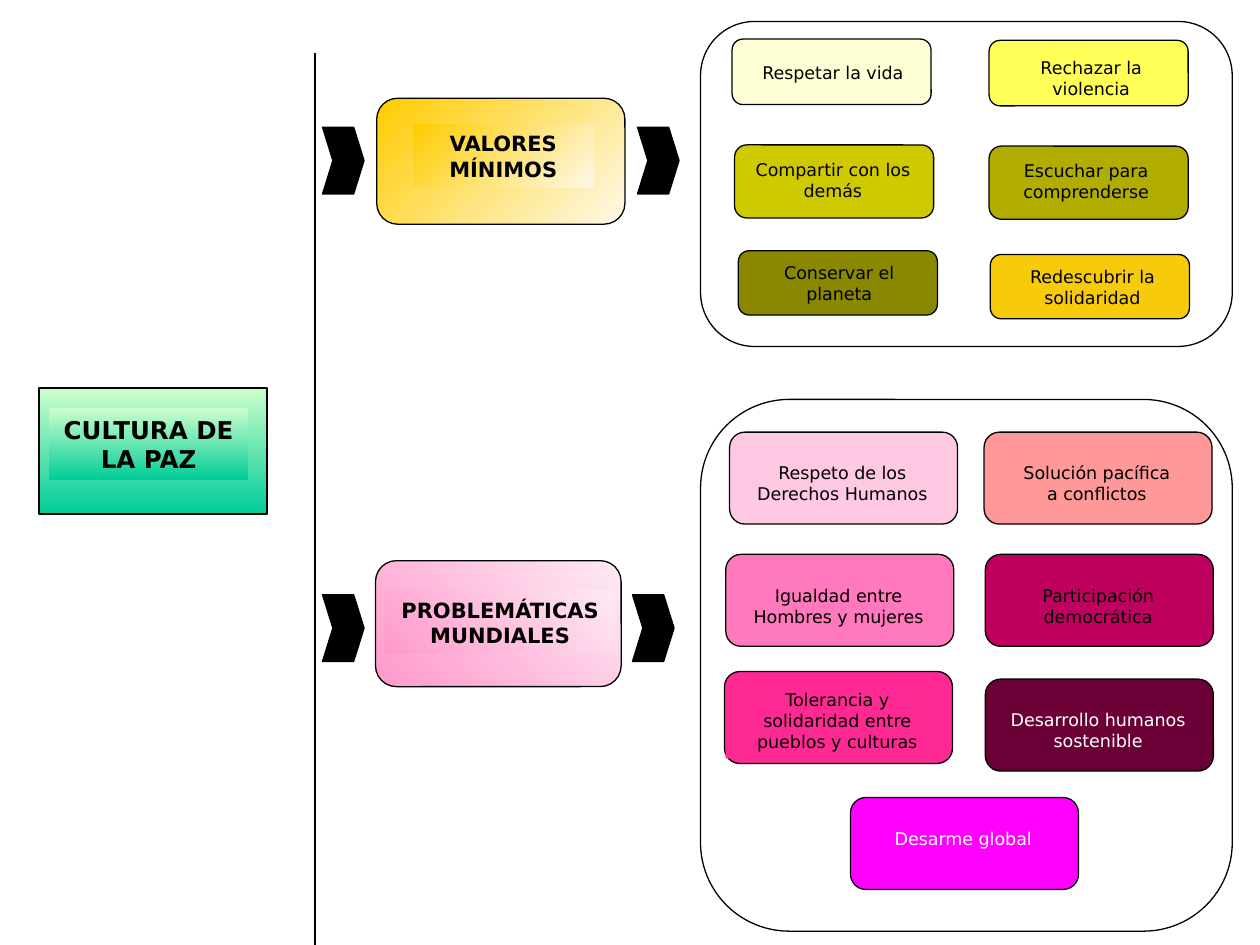
from dataclasses import dataclass
from typing import NamedTuple, Optional

from lxml.etree import SubElement
from pptx import Presentation
from pptx.dml.color import RGBColor
from pptx.enum.shapes import MSO_CONNECTOR, MSO_SHAPE
from pptx.enum.text import MSO_ANCHOR, MSO_AUTO_SIZE, PP_ALIGN
from pptx.oxml.ns import qn
from pptx.util import Inches, Pt


@dataclass(frozen=True)
class Theme:
    font: str = "DejaVu Sans"
    ink: str = "000000"
    light: str = "FFFFFF"
    root_size: float = 14
    branch_size: float = 12
    leaf_size: float = 10
    line_width: float = 0.75
    root: tuple = ("CCFFCC", "00CC99")
    values: tuple = ("FEF9E9", "FFCC00")
    problems: tuple = ("FEEAF4", "FF99CC")


THEME = Theme()


class Box(NamedTuple):
    x: float
    y: float
    w: float
    h: float


class Paint(NamedTuple):
    """One colour, or two colours with a counterclockwise angle."""
    start: str
    end: Optional[str] = None
    angle: float = 0


class Node(NamedTuple):
    """A frame with a text label laid over it."""
    text: str
    frame: Box
    label: Box
    paint: Paint
    size: float = THEME.leaf_size
    color: str = THEME.ink
    bold: bool = False
    shape: MSO_SHAPE = MSO_SHAPE.ROUNDED_RECTANGLE


def rgb(value: str) -> RGBColor:
    return RGBColor.from_string(value)


def apply_paint(sp, paint: Optional[Paint]) -> None:
    if paint is None:
        sp.fill.background()
    elif paint.end is None:
        sp.fill.solid()
        sp.fill.fore_color.rgb = rgb(paint.start)
    else:
        sp.fill.gradient()
        sp.fill.gradient_angle = paint.angle
        for stop, color in zip(sp.fill.gradient_stops, (paint.start, paint.end)):
            stop.color.rgb = rgb(color)


def draw_shape(s, kind: MSO_SHAPE, box: Box, paint: Optional[Paint],
               outlined: bool = True):
    sp = s.shapes.add_shape(kind, *map(Inches, box))
    sp.shadow.inherit = False
    apply_paint(sp, paint)
    if outlined:
        sp.line.color.rgb = rgb(THEME.ink)
        sp.line.width = Pt(THEME.line_width)
    else:
        sp.line.fill.background()
    return sp


def write_label(sp, node: Node) -> None:
    tf = sp.text_frame
    frame_format = {
        "word_wrap": True, "auto_size": MSO_AUTO_SIZE.NONE,
        "vertical_anchor": MSO_ANCHOR.TOP,
        "margin_left": Inches(0.1), "margin_right": Inches(0.1),
        "margin_top": Inches(0.05), "margin_bottom": Inches(0.05),
    }
    for name, value in frame_format.items():
        setattr(tf, name, value)
    font_format = {"name": THEME.font, "size": Pt(node.size), "bold": node.bold}
    for i, line in enumerate(node.text.split("\n")):
        p = tf.paragraphs[0] if i == 0 else tf.add_paragraph()
        p.alignment = PP_ALIGN.CENTER
        r = p.add_run()
        r.text = line
        for name, value in font_format.items():
            setattr(r.font, name, value)
        r.font.color.rgb = rgb(node.color)


def draw_node(s, node: Node) -> None:
    draw_shape(s, node.shape, node.frame, node.paint)
    sp = draw_shape(s, MSO_SHAPE.RECTANGLE, node.label, node.paint, outlined=False)
    write_label(sp, node)


def draw_title(s, node: Node) -> None:
    """Place the slide title over its own frame."""
    draw_shape(s, node.shape, node.frame, node.paint)
    sp = s.shapes.title
    sp.left, sp.top, sp.width, sp.height = map(Inches, node.label)
    apply_paint(sp, node.paint)
    write_label(sp, node)
    s.shapes._spTree.append(sp._element)  # bring in front of the frame


def draw_divider(s, x: float, top: float, bottom: float) -> None:
    line = s.shapes.add_connector(
        MSO_CONNECTOR.STRAIGHT, Inches(x), Inches(top), Inches(x), Inches(bottom))
    line.line.color.rgb = rgb(THEME.ink)
    line.line.width = Pt(THEME.line_width)
    SubElement(line._element.spPr, qn("a:effectLst"))


def draw_chevron(s, x: float, y: float) -> None:
    sp = draw_shape(s, MSO_SHAPE.CHEVRON, Box(x, y, 0.33, 0.53), Paint(THEME.ink))
    sp.adjustments[0] = 0.25


def value_node(text: str, x: float, y: float, h: float, color: str,
               label: Box) -> Node:
    return Node(text, Box(x, y, 1.58, h), label, Paint(color))


def problem_node(text: str, x: float, y: float, fill: str,
                 color: str = THEME.ink, drop: float = 0.19,
                 label_h: float = 0.43) -> Node:
    return Node(text, Box(x, y, 1.81, 0.73), Box(x + 0.01, y + drop, 1.77, label_h),
                Paint(fill), color=color)


ROOT = Node("CULTURA DE LA PAZ", Box(0.31, 3.08, 1.81, 1), Box(0.39, 3.24, 1.58, 0.57),
            Paint(*THEME.root, 270), THEME.root_size, bold=True,
            shape=MSO_SHAPE.RECTANGLE)

BRANCHES = [
    Node("VALORES MÍNIMOS", Box(2.99, 0.78, 1.97, 1), Box(3.28, 0.99, 1.43, 0.5),
         Paint(*THEME.values, 135), THEME.branch_size, bold=True),
    Node("PROBLEMÁTICAS MUNDIALES", Box(2.98, 4.45, 1.95, 1),
         Box(3.05, 4.69, 1.84, 0.5),
         Paint(*THEME.problems, 225), THEME.branch_size, bold=True),
]

CHEVRONS = [(2.56, 1.01), (5.06, 1.01), (2.56, 4.72), (5.02, 4.72)]
PANELS = [Box(5.56, 0.17, 4.22, 2.58), Box(5.56, 3.17, 4.22, 4.22)]

VALUES = [
    value_node("Respetar la vida", 5.81, 0.31, 0.52, "FFFFD5",
               Box(5.92, 0.44, 1.38, 0.27)),
    value_node("Compartir con los\ndemás", 5.83, 1.15, 0.58, "CFCA00",
               Box(5.89, 1.21, 1.44, 0.43)),
    value_node("Rechazar la violencia", 7.85, 0.32, 0.52, "FFFF57",
               Box(7.97, 0.4, 1.38, 0.43)),
    value_node("Escuchar para comprenderse", 7.85, 1.16, 0.58, "B0AC00",
               Box(7.9, 1.22, 1.44, 0.43)),
    value_node("Redescubrir la solidaridad", 7.86, 2.02, 0.51, "F8CB0A",
               Box(8.03, 2.06, 1.28, 0.43)),
    value_node("Conservar el planeta", 5.86, 1.99, 0.51, "8A8700",
               Box(6.02, 2.03, 1.28, 0.43)),
]

PROBLEMS = [
    problem_node("Tolerancia y solidaridad entre pueblos y culturas", 5.75, 5.33,
                 "FF2994", drop=0.09, label_h=0.6),
    problem_node("Respeto de los\nDerechos Humanos", 5.79, 3.43, "FFC9E4"),
    problem_node("Solución pacífica\na conflictos", 7.81, 3.43, "FF9999"),
    problem_node("Igualdad entre\nHombres y mujeres", 5.76, 4.4, "FF79BC"),
    problem_node("Participación\ndemocrática", 7.82, 4.4, "BE005F"),
    problem_node("Desarrollo humanos\nsostenible", 7.82, 5.39, "6A0035", THEME.light),
    problem_node("Desarme global", 6.75, 6.33, "FF00FF", THEME.light, label_h=0.27),
]


def main() -> None:
    prs = Presentation()
    prs.slide_width, prs.slide_height = Inches(10), Inches(7.5)
    s = prs.slides.add_slide(prs.slide_layouts[5])

    # Root concept and the divider beside it
    draw_title(s, ROOT)
    draw_divider(s, 2.5, 0.42, 7.5)

    # Chevrons leading into and out of each branch
    for x, y in CHEVRONS:
        draw_chevron(s, x, y)

    # Panels behind the leaves
    for box in PANELS:
        draw_shape(s, MSO_SHAPE.ROUNDED_RECTANGLE, box, None)

    # Branches and their leaves
    for node in BRANCHES + VALUES + PROBLEMS:
        draw_node(s, node)

    prs.save("out.pptx")


if __name__ == "__main__":
    main()
